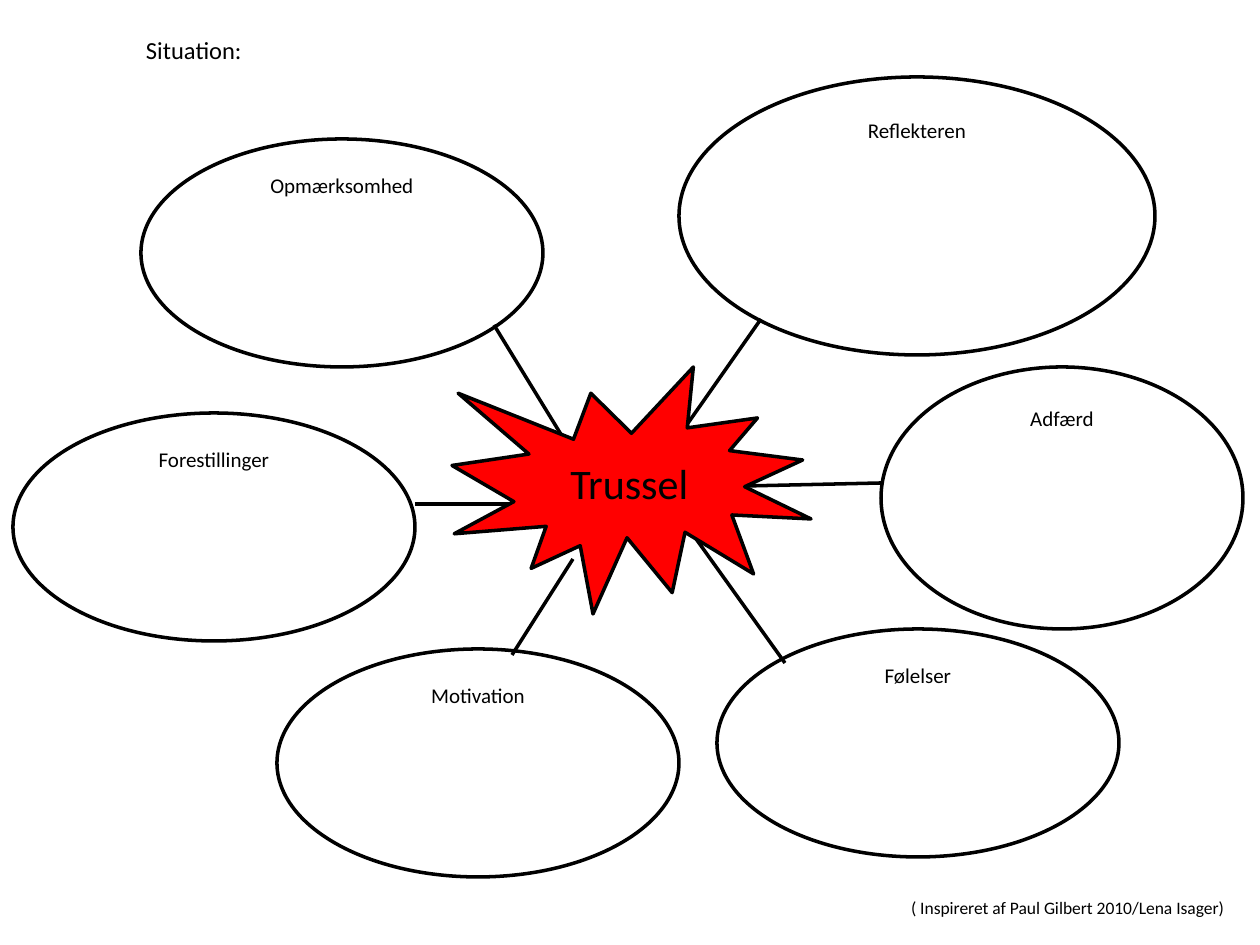
from dataclasses import dataclass

from lxml.etree import SubElement
from pptx import Presentation
from pptx.dml.color import RGBColor
from pptx.enum.shapes import MSO_CONNECTOR, MSO_SHAPE
from pptx.enum.text import MSO_ANCHOR, MSO_AUTO_SIZE, PP_ALIGN
from pptx.oxml.ns import qn
from pptx.util import Pt

EMU_PER_PX = 914400 / 126


@dataclass(frozen=True)
class Theme:
    font: str = "Calibri"
    ink: RGBColor = RGBColor(0, 0, 0)
    threat: RGBColor = RGBColor(255, 0, 0)
    outline: float = 2
    heading: int = 14
    label: int = 12
    center: int = 24
    credit: int = 10


THEME = Theme()
SLIDE_SIZE = (1260, 945)
OVAL_SIZE = (402, 228)

# Label, left and top, size
OVALS = [
    ("Opmærksomhed", (141, 139), OVAL_SIZE),
    ("Motivation", (277, 649), OVAL_SIZE),
    ("Følelser", (717, 629), OVAL_SIZE),
    ("Forestillinger", (13, 413), OVAL_SIZE),
    ("Adfærd", (881, 367), (362, 262)),
    ("Reflekteren", (679, 77), (476, 278)),
]
# Start and end of each spoke between the burst and an oval
SPOKES = [
    ((745, 486), (881, 483)),
    ((573, 559), (512, 655)),
    ((694, 536), (785, 663)),
    ((494, 325), (562, 436)),
    ((415, 504), (512, 504)),
    ((761, 319), (679, 436)),
]
HEADING = ("Situation:", (141, 35), (977, 88))
BURST = ("Trussel", (452, 367), (359, 247))
CREDIT = ("( Inspireret af Paul Gilbert 2010/Lena Isager)", (898, 891), (344, 34))


def px(*lengths):
    return [round(length * EMU_PER_PX) for length in lengths]


def write(shape, text, size, align=PP_ALIGN.CENTER, anchor=MSO_ANCHOR.TOP, inset=5):
    """Set the text; inset is both the right margin and the left indent."""
    frame = shape.text_frame
    frame.word_wrap = True
    frame.auto_size = MSO_AUTO_SIZE.NONE
    frame.vertical_anchor = anchor
    frame.margin_left = frame.margin_top = frame.margin_bottom = 0
    frame.margin_right = px(inset)[0]
    frame.text = text
    paragraph = frame.paragraphs[0]
    paragraph.alignment = align
    properties = paragraph._p.get_or_add_pPr()
    properties.set("marL", str(px(inset)[0]))
    properties.set("indent", "0")
    font = paragraph.runs[0].font
    font.name, font.size = THEME.font, Pt(size)
    font.color.rgb = THEME.ink


def draw_outline(line):
    line.color.rgb = THEME.ink
    line.width = Pt(THEME.outline)


def add_outlined(slide, kind, position, size, fill=None):
    shape = slide.shapes.add_shape(kind, *px(*position, *size))
    shape.shadow.inherit = False
    if fill is None:
        shape.fill.background()
    else:
        shape.fill.solid()
        shape.fill.fore_color.rgb = fill
    draw_outline(shape.line)
    return shape


def add_spoke(slide, start, end):
    spoke = slide.shapes.add_connector(MSO_CONNECTOR.STRAIGHT, *px(*start, *end))
    draw_outline(spoke.line)
    SubElement(spoke._element.spPr, qn("a:effectLst"))


def add_heading(slide):
    text, position, size = HEADING
    title = slide.shapes.title
    title.left, title.top, title.width, title.height = px(*position, *size)
    write(title, text, THEME.heading, align=PP_ALIGN.LEFT)


def add_credit(slide):
    text, position, size = CREDIT
    box = slide.shapes.add_textbox(*px(*position, *size))
    write(box, text, THEME.credit, align=PP_ALIGN.LEFT, inset=0)
    frame = box.text_frame
    frame.word_wrap = False
    frame.auto_size = MSO_AUTO_SIZE.SHAPE_TO_FIT_TEXT
    frame.margin_left, frame.margin_right = px(13, 13)
    frame.margin_top, frame.margin_bottom = px(6, 6)


def main():
    presentation = Presentation()
    presentation.slide_width, presentation.slide_height = px(*SLIDE_SIZE)
    slide = presentation.slides.add_slide(presentation.slide_layouts[5])

    add_heading(slide)
    for label, position, size in OVALS:
        write(add_outlined(slide, MSO_SHAPE.OVAL, position, size), label, THEME.label)
    for start, end in SPOKES:
        add_spoke(slide, start, end)
    label, position, size = BURST
    burst = add_outlined(slide, MSO_SHAPE.EXPLOSION1, position, size, THEME.threat)
    write(burst, label, THEME.center, anchor=MSO_ANCHOR.MIDDLE, inset=11)
    add_credit(slide)

    presentation.save("out.pptx")


if __name__ == "__main__":
    main()
